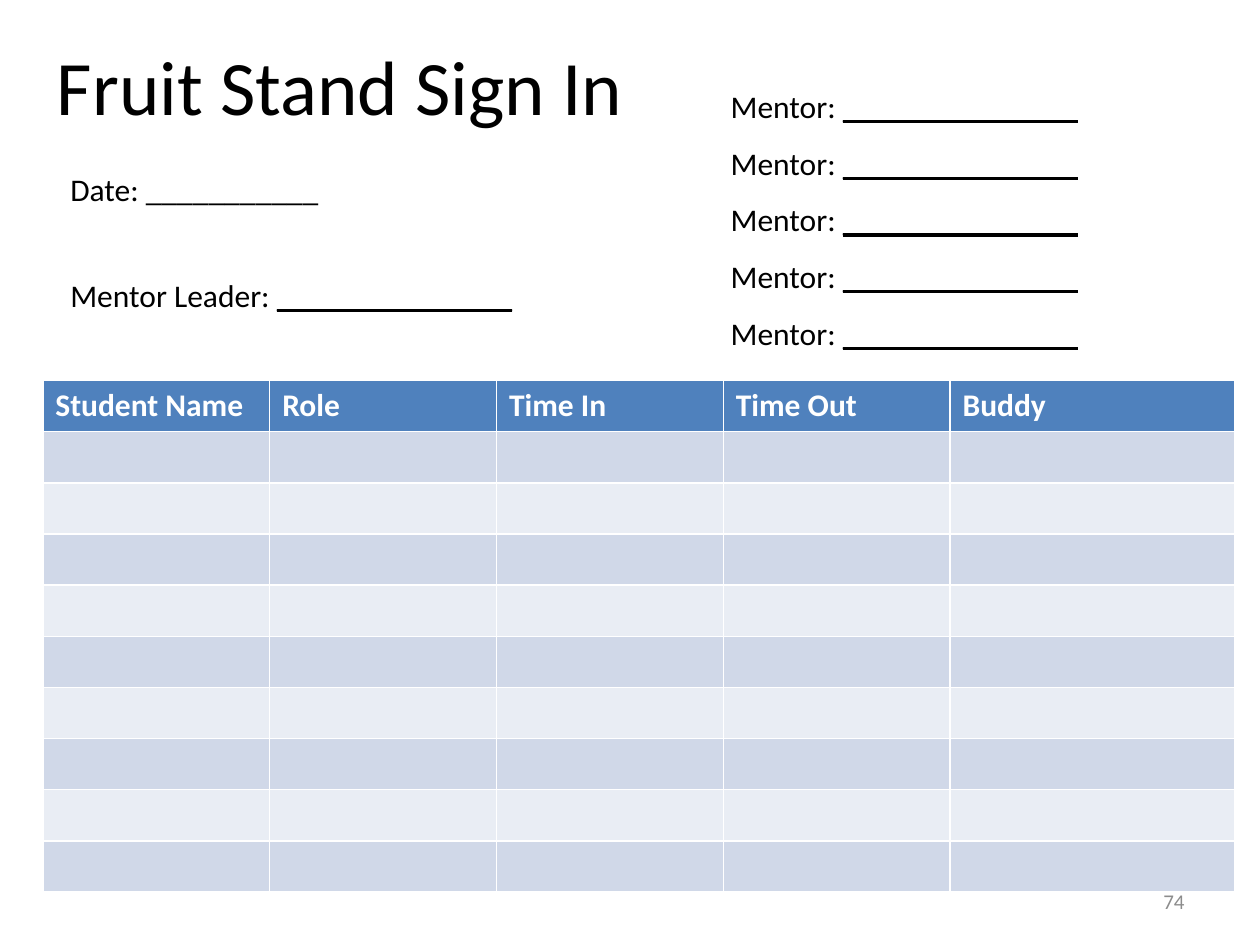
from pptx import Presentation
from pptx.dml.color import RGBColor
from pptx.enum.text import MSO_ANCHOR, PP_ALIGN
from pptx.util import Inches, Pt

LEFT, CENTER, RIGHT = PP_ALIGN.LEFT, PP_ALIGN.CENTER, PP_ALIGN.RIGHT
TOP, MIDDLE = MSO_ANCHOR.TOP, MSO_ANCHOR.MIDDLE

BLACK = RGBColor(0x00, 0x00, 0x00)
WHITE = RGBColor(0xFF, 0xFF, 0xFF)
GRAY = RGBColor(0x8C, 0x8C, 0x8C)
HEADER = RGBColor(0x4F, 0x81, 0xBD)
BANDS = (RGBColor(0xD0, 0xD8, 0xE8), RGBColor(0xE9, 0xED, 0xF4))

BLANK_LINE = "_" * 15


def add_run(p, text, size=18, color=BLACK, bold=False, underline=False):
    r = p.add_run()
    r.text = text
    r.font.name = "Calibri"
    r.font.size = Pt(size)
    r.font.color.rgb = color
    r.font.bold = bold
    r.font.underline = underline


class SignInSheet:
    def __init__(self, prs):
        self.slide = prs.slides.add_slide(prs.slide_layouts[6])

    def box(self, x, y, w, h, anchor=TOP):
        sp = self.slide.shapes.add_textbox(Inches(x), Inches(y), Inches(w), Inches(h))
        tf = sp.text_frame
        tf.word_wrap = True
        tf.vertical_anchor = anchor
        return tf

    def text(self, x, y, w, h, text, align=LEFT, anchor=TOP, **style):
        p = self.box(x, y, w, h, anchor).paragraphs[0]
        p.alignment = align
        add_run(p, text, **style)

    def fields(self, x, y, w, h, labels):
        """Labels, each followed by an underlined space to fill in."""
        tf = self.box(x, y, w, h)
        for i, label in enumerate(labels):
            p = tf.add_paragraph() if i else tf.paragraphs[0]
            p.line_spacing = 1.5
            add_run(p, f"{label}: ")
            add_run(p, BLANK_LINE, underline=True)

    def table(self, x, y, widths, row_height, headings, blank_rows):
        rows = blank_rows + 1
        table = self.slide.shapes.add_table(
            rows, len(widths), Inches(x), Inches(y),
            Inches(sum(widths)), Inches(row_height * rows)).table
        for column, width in zip(table.columns, widths):
            column.width = Inches(width)
        for i, row in enumerate(table.rows):
            row.height = Inches(row_height)
            for cell in row.cells:
                cell.fill.solid()
                cell.fill.fore_color.rgb = BANDS[(i - 1) % 2] if i else HEADER
        for cell, heading in zip(table.rows[0].cells, headings):
            add_run(cell.text_frame.paragraphs[0], heading, color=WHITE, bold=True)


def main():
    prs = Presentation()
    prs.slide_width, prs.slide_height = Inches(10), Inches(7.5)
    sheet = SignInSheet(prs)

    # Title
    sheet.text(-1.8, 0.05, 9, 1.25, "Fruit Stand Sign In",
               align=CENTER, anchor=MIDDLE, size=44)

    # Sign-in table
    sheet.table(0.34, 3.02, [1.8] * 4 + [2.26], 0.406,
                ["Student Name", "Role", "Time In", "Time Out", "Buddy"], 9)

    # Date and mentors
    sheet.text(0.46, 1.3, 3.03, 0.4, "Date: ___________")
    sheet.fields(5.7, 0.49, 3.95, 2.98, ["Mentor"] * 5)
    sheet.fields(0.46, 1.99, 3.95, 1.16, ["Mentor Leader"])

    # Page number
    sheet.text(7.17, 6.95, 2.33, 0.4, "74",
               align=RIGHT, anchor=MIDDLE, size=12, color=GRAY)

    prs.save("out.pptx")


if __name__ == "__main__":
    main()
